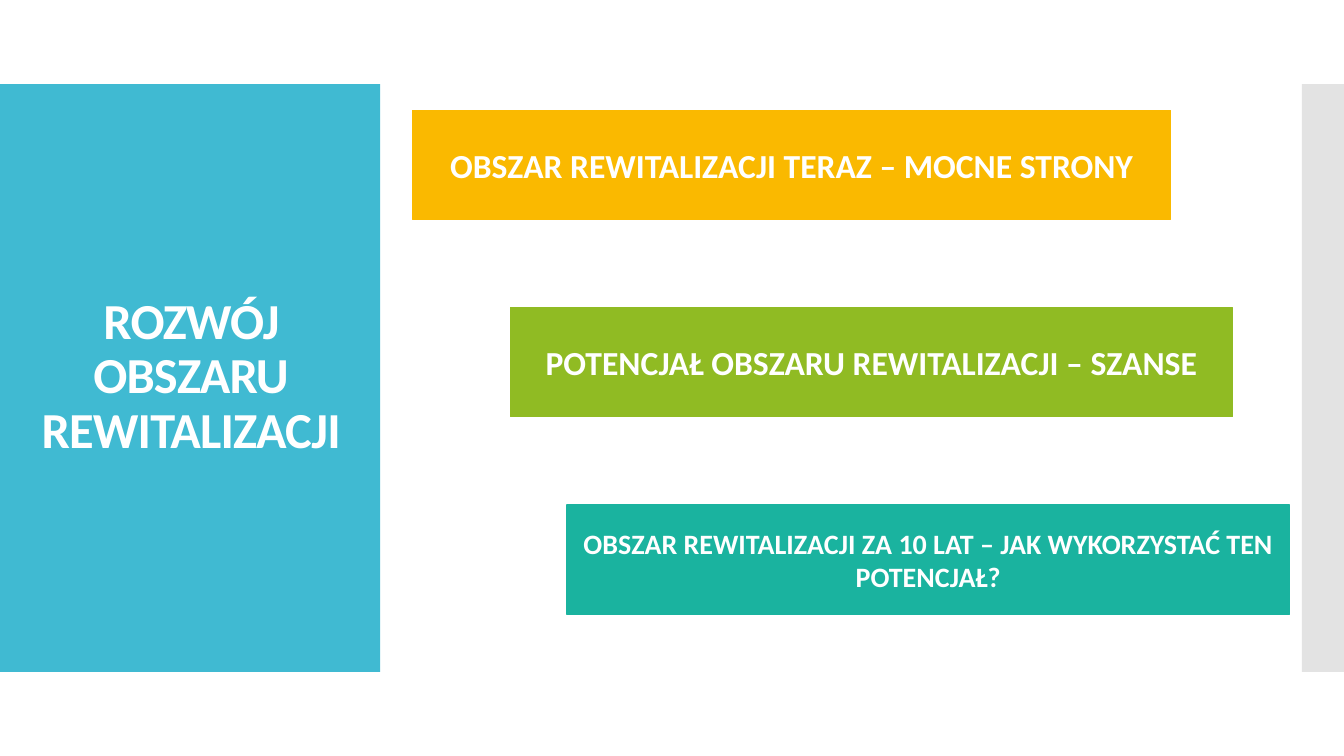
from dataclasses import dataclass

from pptx import Presentation
from pptx.dml.color import RGBColor
from pptx.enum.shapes import MSO_SHAPE as Preset
from pptx.enum.text import MSO_ANCHOR as Anchor, PP_ALIGN as Align
from pptx.oxml.xmlchemy import OxmlElement
from pptx.shapes.autoshape import Shape
from pptx.slide import Slide
from pptx.text.text import TextFrame
from pptx.util import Pt

EMU_PER_PX = 9525


@dataclass(frozen=True)
class Theme:
    font: str = "Calibri"
    white: str = "FFFFFF"
    blue: str = "40BAD2"
    grey: str = "C8C8C8"
    amber: str = "FAB900"
    green: str = "90BB23"
    teal: str = "1AB39F"
    title_size: int = 36
    stage_size: int = 24
    long_stage_size: int = 20
    outline: float = 0.85


@dataclass(frozen=True)
class Box:
    left: int
    top: int
    width: int
    height: int

    def emu(self) -> tuple[int, int, int, int]:
        return (self.left * EMU_PER_PX, self.top * EMU_PER_PX,
                self.width * EMU_PER_PX, self.height * EMU_PER_PX)


@dataclass(frozen=True)
class Stage:
    text: str
    left: int
    width: int
    color: str
    size: int


THEME = Theme()
SLIDE_WIDTH, SLIDE_HEIGHT = 1280, 720
BAND_TOP, BAND_HEIGHT = 80, 560
TITLE_PANEL = Box(0, BAND_TOP, 362, BAND_HEIGHT)
EDGE_PANEL = Box(1240, BAND_TOP, 40, BAND_HEIGHT)
TITLE_AREA = Box(11, 118, 342, 483)
TITLE_LINES = ("ROZWÓJ OBSZARU", "REWITALIZACJI")
STAGE_TOP, STAGE_STEP, STAGE_HEIGHT = 105, 188, 104
STAGES = (
    Stage("OBSZAR REWITALIZACJI TERAZ – MOCNE STRONY",
          393, 722, THEME.amber, THEME.stage_size),
    Stage("POTENCJAŁ OBSZARU REWITALIZACJI – SZANSE",
          486, 688, THEME.green, THEME.stage_size),
    Stage("OBSZAR REWITALIZACJI ZA 10 LAT – JAK WYKORZYSTAĆ TEN POTENCJAŁ?",
          540, 688, THEME.teal, THEME.long_stage_size),
)


def add_panel(slide: Slide, box: Box, color: str) -> Shape:
    panel = slide.shapes.add_shape(Preset.RECTANGLE, *box.emu())
    panel.shadow.inherit = False
    panel.fill.solid()
    panel.fill.fore_color.rgb = RGBColor.from_string(color)
    panel.line.fill.background()
    return panel


def set_opacity(panel: Shape, percent: int) -> None:
    alpha = OxmlElement("a:alpha")
    alpha.set("val", str(percent * 1000))
    panel.fill._xPr.find(".//{*}srgbClr").append(alpha)


def write_centred(frame: TextFrame, lines: tuple[str, ...], size: int,
                  line_spacing: float = 1.0, tracking: int = 0) -> None:
    frame.word_wrap = True
    frame.vertical_anchor = Anchor.MIDDLE
    paragraph = frame.paragraphs[0]
    paragraph.alignment = Align.CENTER
    paragraph.line_spacing = line_spacing
    for index, line in enumerate(lines):
        if index:
            paragraph.add_line_break()
        run = paragraph.add_run()
        run.text = line
        run.font.name = THEME.font
        run.font.size = Pt(size)
        run.font.bold = True
        run.font.color.rgb = RGBColor.from_string(THEME.white)
        if tracking:
            run.font._element.set("spc", str(tracking))


def add_title(slide: Slide) -> None:
    title = slide.shapes.add_textbox(*TITLE_AREA.emu())
    write_centred(title.text_frame, TITLE_LINES, THEME.title_size,
                  line_spacing=0.9, tracking=-60)


def add_stage(slide: Slide, stage: Stage, top: int) -> None:
    bar = add_panel(slide, Box(stage.left, top, stage.width, STAGE_HEIGHT),
                    stage.color)
    bar.line.color.rgb = RGBColor.from_string(stage.color)
    bar.line.width = Pt(THEME.outline)
    write_centred(bar.text_frame, (stage.text,), stage.size)


def main() -> None:
    deck = Presentation()
    deck.slide_width = SLIDE_WIDTH * EMU_PER_PX
    deck.slide_height = SLIDE_HEIGHT * EMU_PER_PX
    slide = deck.slides.add_slide(deck.slide_layouts[6])
    add_panel(slide, TITLE_PANEL, THEME.blue)
    set_opacity(add_panel(slide, EDGE_PANEL, THEME.grey), 50)
    add_title(slide)
    for index, stage in enumerate(STAGES):
        add_stage(slide, stage, STAGE_TOP + index * STAGE_STEP)
    deck.save("out.pptx")


if __name__ == "__main__":
    main()
